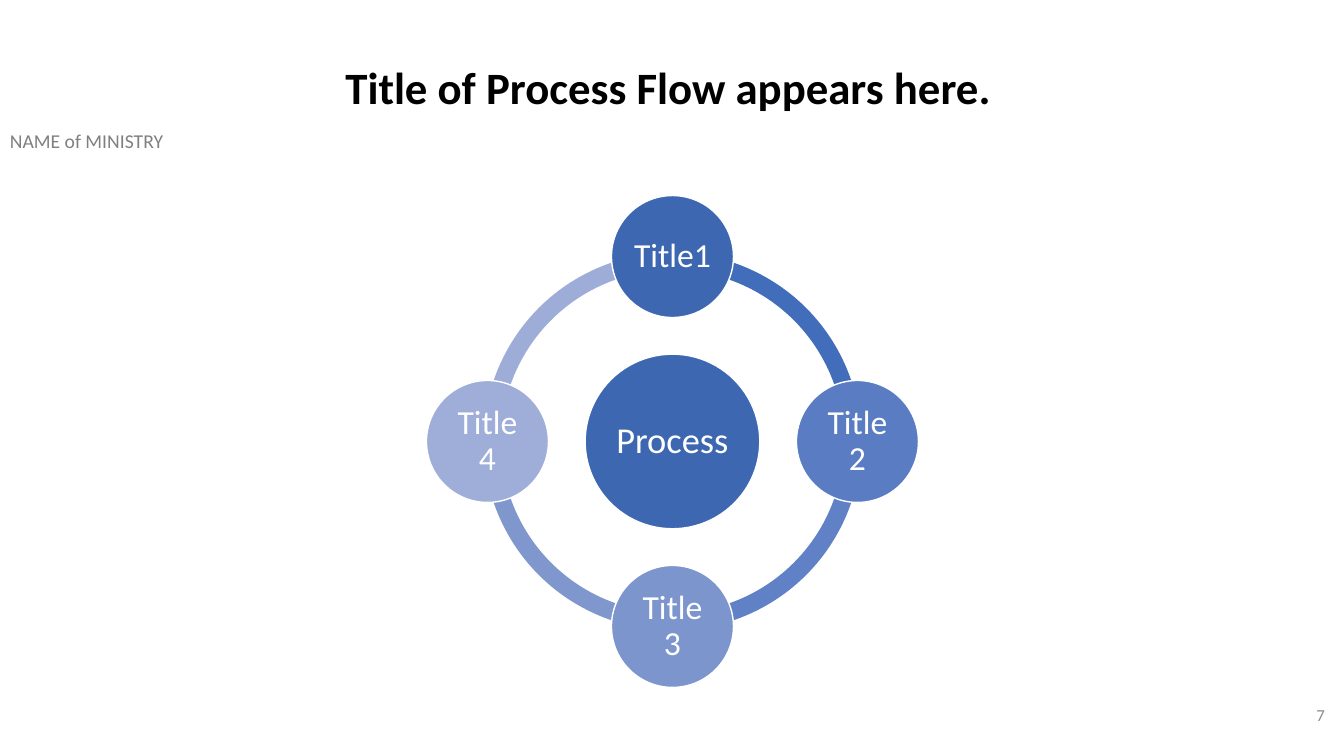
import dataclasses
import math

import pptx
import pptx.dml.color
import pptx.enum.shapes
import pptx.enum.text
import pptx.util

Inches = pptx.util.Inches
SHAPES = pptx.enum.shapes.MSO_SHAPE
ALIGN = pptx.enum.text.PP_ALIGN
ANCHOR = pptx.enum.text.MSO_ANCHOR


@dataclasses.dataclass(frozen=True)
class Theme:
    """Colours and type sizes of the slide."""
    font: str = "Calibri"
    title: str = "000000"
    ministry: str = "808080"
    number: str = "8C8C8C"
    white: str = "FFFFFF"
    hub: str = "3E67B2"
    nodes: tuple = ("3E67B2", "5A7CC3", "7D95CD", "9FAED8")
    arcs: tuple = ("416DBB", "6081C5", "8097CE", "9EADD8")
    title_size: int = 32
    hub_size: int = 26
    node_size: int = 24
    ministry_size: int = 14
    number_size: int = 12


THEME = Theme()
STEPS = ("Title1", "Title 2", "Title 3", "Title 4")


def rgb(value):
    """Turn a hex string into a colour."""
    return pptx.dml.color.RGBColor.from_string(value)


def write_text(shape, text, *, size, color, bold=False, align=ALIGN.LEFT,
               anchor=ANCHOR.TOP, spacing=1.0, inset=None):
    """Write one formatted paragraph into a shape."""
    frame = shape.text_frame
    frame.word_wrap = True
    frame.vertical_anchor = anchor
    if inset is not None:
        frame.margin_left = frame.margin_right = Inches(inset)
        frame.margin_top = frame.margin_bottom = Inches(inset)
    paragraph = frame.paragraphs[0]
    paragraph.alignment = align
    paragraph.line_spacing = spacing
    run = paragraph.add_run()
    run.text = text
    run.font.name = THEME.font
    run.font.size = pptx.util.Pt(size)
    run.font.bold = bold
    run.font.color.rgb = rgb(color)


def add_label(slide, box, text, **text_format):
    """Add a text box at box (left, top, width, height)."""
    shape = slide.shapes.add_textbox(*map(Inches, box))
    write_text(shape, text, **text_format)


def add_round_shape(shapes, kind, center_x, center_y, diameter, fill):
    """Add a filled shape centred on a point."""
    left, top = center_x - diameter / 2, center_y - diameter / 2
    shape = shapes.add_shape(kind, Inches(left), Inches(top),
                             Inches(diameter), Inches(diameter))
    shape.shadow.inherit = False
    shape.fill.solid()
    shape.fill.fore_color.rgb = rgb(fill)
    shape.line.fill.background()
    return shape


def add_circle(shapes, center_x, center_y, diameter, fill, text, size, inset):
    """Add a white-edged circle with centred text."""
    circle = add_round_shape(shapes, SHAPES.OVAL, center_x, center_y, diameter, fill)
    circle.line.color.rgb = rgb(THEME.white)
    circle.line.width = pptx.util.Pt(1)
    write_text(circle, text, size=size, color=THEME.white, align=ALIGN.CENTER,
               anchor=ANCHOR.MIDDLE, spacing=0.9, inset=inset)


def add_process_cycle(slide, box):
    """Draw the ring, hub and step circles inside a square box."""
    left, top, side = box
    center_x, center_y = left + side / 2, top + side / 2
    node_diameter = side * 0.248
    orbit = (side - node_diameter) / 2
    quarter_turn = 54
    shapes = slide.shapes.add_group_shape().shapes

    for index, color in reversed(list(enumerate(THEME.arcs))):
        arc = add_round_shape(shapes, SHAPES.BLOCK_ARC, center_x, center_y,
                              side * 0.768, color)
        arc.adjustments[0] = (index + 3) % 4 * quarter_turn
        arc.adjustments[1] = index * quarter_turn
        arc.adjustments[2] = 0.046

    add_circle(shapes, center_x, center_y, side * 0.355, THEME.hub,
               "Process", THEME.hub_size, 0.04)
    for index, (step, color) in enumerate(zip(STEPS, THEME.nodes)):
        angle = index * math.tau / len(STEPS)
        add_circle(shapes, center_x + orbit * math.sin(angle),
                   center_y - orbit * math.cos(angle), node_diameter, color,
                   step, THEME.node_size, 0.03)


def build_process_slide(presentation):
    """Add the process flow slide."""
    slide = presentation.slides.add_slide(presentation.slide_layouts[6])
    add_label(slide, (0, 1.23, 2.9, 0.34), "NAME of MINISTRY",
              size=THEME.ministry_size, color=THEME.ministry)
    add_label(slide, (10.24, 6.89, 3, 0.4), "7", size=THEME.number_size,
              color=THEME.number, align=ALIGN.RIGHT, anchor=ANCHOR.MIDDLE)
    add_process_cycle(slide, (4.23, 1.94, 4.88))
    add_label(slide, (3.28, 0.6, 6.8, 1.07), "Title of Process Flow appears here. ",
              size=THEME.title_size, color=THEME.title, bold=True,
              align=ALIGN.CENTER, spacing=0.9)


def main():
    """Build and save the presentation."""
    presentation = pptx.Presentation()
    presentation.slide_width = Inches(13.33)
    presentation.slide_height = Inches(7.5)
    build_process_slide(presentation)
    presentation.save("out.pptx")


if __name__ == "__main__":
    main()
